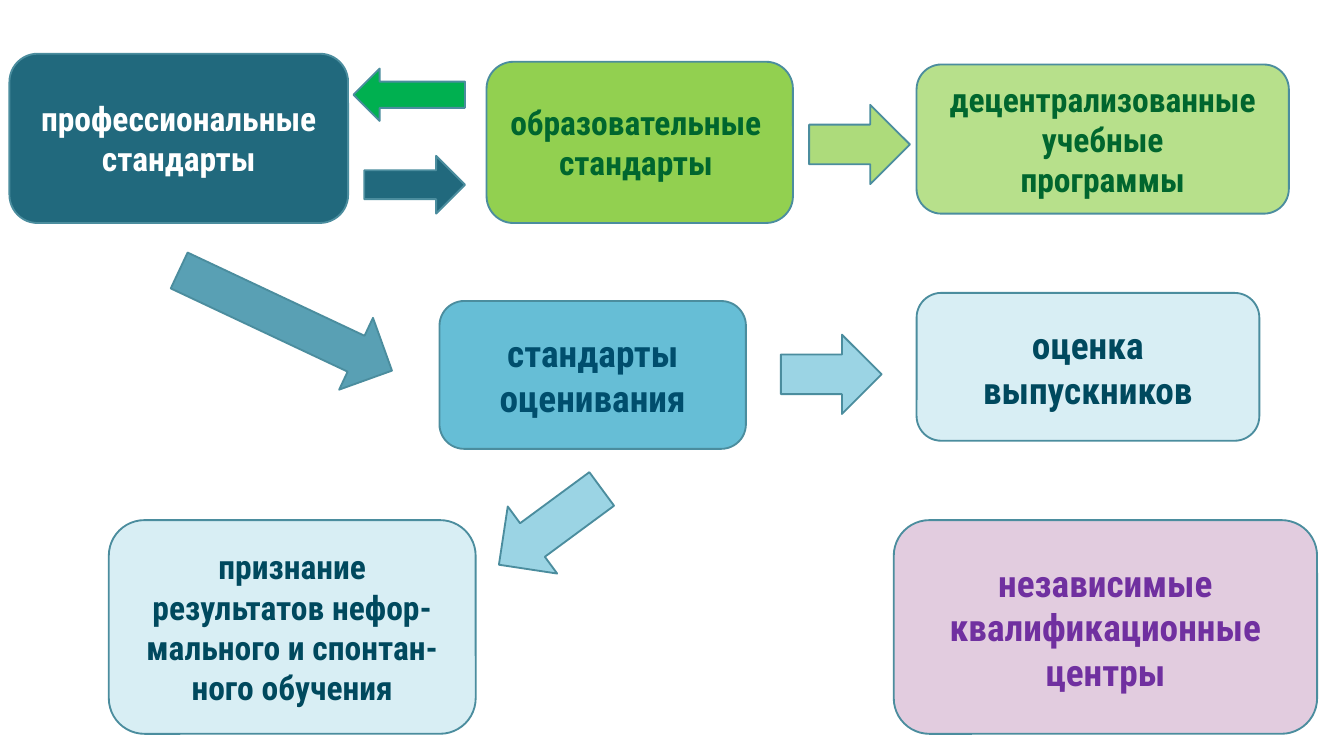
import pptx
import pptx.util
import pptx.dml.color
import pptx.enum.shapes
import pptx.enum.text
import pptx.oxml.ns
import lxml.etree

Inches = pptx.util.Inches
Shape = pptx.enum.shapes.MSO_SHAPE


def color(value):
    return pptx.dml.color.RGBColor.from_string(value)


def add_figure(slide, kind, place, fill, opacity):
    figure = slide.shapes.add_shape(kind, *[Inches(length) for length in place])
    figure.shadow.inherit = False
    figure.fill.solid()
    figure.fill.fore_color.rgb = color(fill)
    if opacity < 100:
        fill_color = figure.fill._xPr.find(".//" + pptx.oxml.ns.qn("a:srgbClr"))
        alpha = lxml.etree.SubElement(fill_color, pptx.oxml.ns.qn("a:alpha"))
        alpha.set("val", str(opacity * 1000))
    figure.line.color.rgb = color("4B8D9E")
    figure.line.width = pptx.util.Pt(1)
    return figure


deck = pptx.Presentation()
deck.slide_width = Inches(10)
deck.slide_height = Inches(10 * 9 / 16)
slide = deck.slides.add_slide(deck.slide_layouts[6])

boxes = [
    ("профессиональные\nстандарты", (0.07, 0.4, 2.52, 1.26), "21697D", 100, 18, "FFFFFF"),
    ("децентрализованные\nучебные\nпрограммы", (6.82, 0.48, 2.77, 1.11), "92D050", 66, 18, "00662E"),
    ("стандарты оценивания", (3.27, 2.24, 2.28, 1.1), "66BED6", 100, 20, "004E6D"),
    ("признание результатов нефор-мального и спонтан-ного обучения",
     (0.81, 3.87, 2.73, 1.59), "66BED6", 25, 18, "00495E"),
    ("оценка выпускников", (6.82, 2.18, 2.55, 1.1), "66BED6", 25, 20, "00495E"),
    ("независимые квалификационные центры", (6.65, 3.87, 3.15, 1.59), "E2CCDF", 100, 20, "7030A0"),
    ("образовательные \nстандарты ", (3.62, 0.46, 2.28, 1.2), "92D050", 100, 18, "00662E"),
]
for text, place, fill, opacity, size, text_color in boxes:
    box = add_figure(slide, Shape.ROUNDED_RECTANGLE, place, fill, opacity)
    frame = box.text_frame
    frame.word_wrap = True
    frame.vertical_anchor = pptx.enum.text.MSO_ANCHOR.MIDDLE
    frame.text = text
    for para in frame.paragraphs:
        para.alignment = pptx.enum.text.PP_ALIGN.CENTER
        for span in para.runs:
            span.font.name = "Roboto Condensed"
            span.font.size = pptx.util.Pt(size)
            span.font.bold = True
            span.font.color.rgb = color(text_color)

arrows = [
    (Shape.LEFT_ARROW, (2.63, 0.51, 0.83, 0.39), "00B050", 100, 0),
    (Shape.RIGHT_ARROW, (2.71, 1.16, 0.75, 0.43), "21697D", 100, 0),
    (Shape.RIGHT_ARROW, (6.02, 0.78, 0.75, 0.59), "92D050", 75, 0),
    (Shape.RIGHT_ARROW, (5.81, 2.49, 0.75, 0.59), "66BED6", 65, 0),
    (Shape.LEFT_ARROW, (3.62, 3.61, 0.95, 0.62), "66BED6", 65, 323.6),
    (Shape.RIGHT_ARROW, (1.25, 2.09, 1.75, 0.59), "006E8C", 65, 25.2),
]
for kind, place, fill, opacity, angle in arrows:
    arrow = add_figure(slide, kind, place, fill, opacity)
    arrow.rotation = angle

deck.save("out.pptx")
